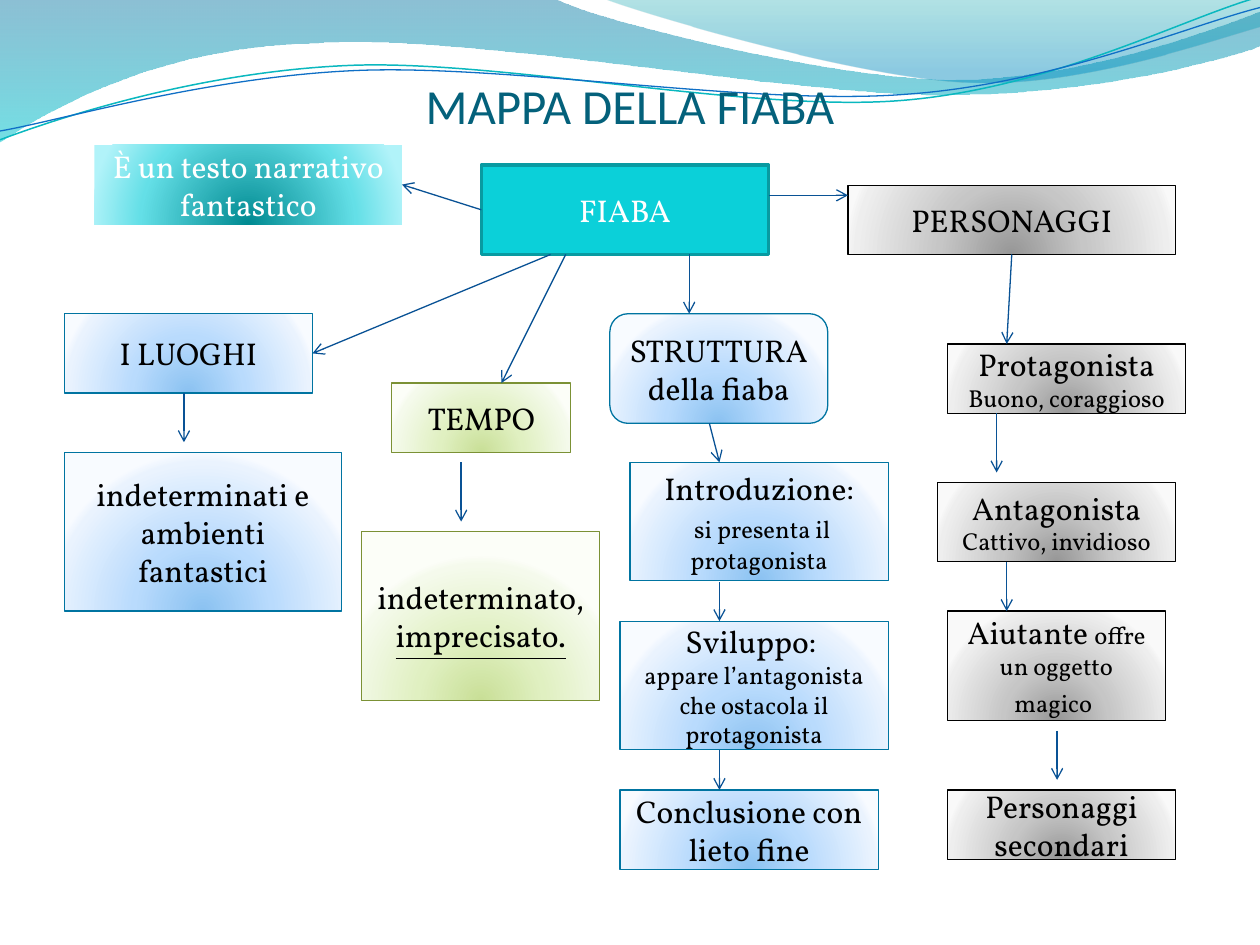
"""Build the concept map of the fairy tale as one slide."""
from dataclasses import dataclass
from typing import NamedTuple, Optional

import pptx
import pptx.dml.color
import pptx.enum.shapes
import pptx.enum.text
import pptx.oxml
import pptx.oxml.ns
import pptx.util

Inches = pptx.util.Inches
SHAPE = pptx.enum.shapes.MSO_SHAPE
ALIGN = pptx.enum.text.PP_ALIGN
ANCHOR = pptx.enum.text.MSO_ANCHOR
FONT = "Vollkorn"
LEFT, BOTTOM, RIGHT = 1, 2, 3
COLORS = {
    "title": "04617B", "fiaba": "0BD0D9", "fiaba_line": "089AA1",
    "arrow": "095295", "white": "FFFFFF", "black": "000000",
    "wave_teal": "0AB8BF", "wave_blue": "0F6FC6",
}


class Stop(NamedTuple):
    pos: int
    color: str
    alpha: int = 100


class Run(NamedTuple):
    text: str
    size: int = 18
    underline: bool = False


class Theme(NamedTuple):
    stops: tuple
    line: Optional[str] = None
    text: str = COLORS["black"]


class Wave(NamedTuple):
    start: tuple
    segments: tuple
    stops: tuple = ()
    line: str = ""
    width: float = 0


@dataclass
class Box:
    name: str
    at: tuple
    theme: Optional[Theme]
    paragraphs: tuple
    preset: int = SHAPE.RECTANGLE


@dataclass
class Arrow:
    start: tuple
    end: tuple
    begin_at: Optional[tuple] = None
    end_at: Optional[tuple] = None


def ramp(*colors: str) -> tuple:
    return tuple(Stop(pos, c) for pos, c in zip((0, 43, 93, 100), colors))


TEAL = Theme((Stop(0, "008A91"), Stop(68, "64DFE7"), Stop(100, "B1F3F9")),
             text=COLORS["white"])
BLUE = Theme(ramp("8BC2F1", "B9DBFD", "EAF3FE", "F8FBFF"), "0074A1")
GREEN = Theme(ramp("C9DF97", "E0F0C1", "F5FAEC", "FCFEF8"), "7B9135")
GREY = Theme(ramp("979797", "C6C6C6", "EEEEEE", "F9F9F9"), "000000")

WAVES = [
    Wave((0, 0), (
        ((4.4, -0.01),),
        ((4.76, 0.17), (6.64, 0.63), (7.58, 0.63)),
        ((8.53, 0.63), (9.58, 0.26), (10, 0.09)),
        ((10.01, 0.36),),
        ((9.83, 0.44), (8.7, 0.76), (7.46, 0.75)),
        ((6.22, 0.75), (3.82, 0.28), (2.57, 0.34)),
        ((1.29, 0.36), (0.46, 0.83), (-0.01, 1.13)),
    ), (Stop(0, "0074A1", 45), Stop(100, "00C6CF", 55))),
    Wave((4.79, -0.01), (
        ((5.09, 0.11), (6.82, 0.62), (7.69, 0.65)),
        ((8.56, 0.69), (9.61, 0.32), (10, 0.21)),
        ((10, 0),),
    ), (Stop(0, "00A1A9", 30), Stop(80, "008BBF", 45))),
    Wave((0, 1.11), (
        ((0.48, 0.93), (1.58, 0.57), (2.77, 0.52)),
        ((3.95, 0.47), (5.93, 0.89), (7.13, 0.8)),
        ((8.33, 0.71), (9.38, 0.15), (9.98, -0.02)),
    ), line=COLORS["wave_teal"], width=0.85),
    Wave((0, 1.04), (
        ((0.47, 0.96), (1.64, 0.61), (2.83, 0.56)),
        ((4.03, 0.51), (5.97, 0.84), (7.17, 0.75)),
        ((8.36, 0.67), (9.41, 0.21), (10, 0.06)),
    ), line=COLORS["wave_blue"], width=0.75),
]

BOXES = [
    Box("fiaba", (3.82, 1.31, 2.28, 0.71), None, ((Run("FIABA"),),)),
    Box("testo", (0.75, 1.15, 2.44, 0.63), TEAL, ((Run("È un testo narrativo fantastico"),),)),
    Box("luoghi", (0.51, 2.49, 1.97, 0.63), BLUE, ((Run("I LUOGHI"),),)),
    Box("ambienti", (0.51, 3.59, 2.2, 1.26), BLUE, ((Run("indeterminati e ambienti fantastici"),),)),
    Box("tempo", (3.11, 3.04, 1.42, 0.55), GREEN, ((Run("TEMPO"),),)),
    Box("imprecisato", (2.87, 4.22, 1.89, 1.34), GREEN,
        ((Run("indeterminato, "), Run("imprecisato.", underline=True)),)),
    Box("personaggi", (6.73, 1.47, 2.6, 0.55), GREY, ((Run("PERSONAGGI"),),)),
    Box("protagonista", (7.52, 2.73, 1.89, 0.55), GREY,
        ((Run("Protagonista"),), (Run("Buono, coraggioso", 14),))),
    Box("antagonista", (7.44, 3.83, 1.89, 0.63), GREY,
        ((Run("Antagonista"),), (Run("Cattivo, invidioso", 14),))),
    Box("aiutante", (7.52, 4.85, 1.73, 0.87), GREY,
        ((Run("Aiutante "), Run("offre un oggetto magico", 14), Run(" ")),)),
    Box("secondari", (7.52, 6.27, 1.81, 0.55), GREY, ((Run("Personaggi secondari"),),)),
    Box("struttura", (4.84, 2.49, 1.73, 0.87), BLUE,
        ((Run("STRUTTURA"),), (Run("della fiaba"),)), SHAPE.ROUNDED_RECTANGLE),
    Box("introduzione", (5, 3.67, 2.05, 0.94), BLUE,
        ((Run("Introduzione:"),), (Run(" "), Run("si presenta il protagonista", 14)))),
    Box("sviluppo", (4.92, 4.93, 2.13, 1.02), BLUE,
        ((Run("Sviluppo: "),), (Run("appare l’antagonista che ostacola il protagonista", 14),))),
    Box("conclusione", (4.92, 6.27, 2.05, 0.63), BLUE, ((Run("Conclusione con lieto fine"),),)),
]

ARROWS = [
    Arrow((6.1, 1.55), (6.73, 1.55)),
    Arrow((3.82, 1.66), (3.19, 1.47), ("fiaba", LEFT), ("testo", RIGHT)),
    Arrow((4.37, 2.02), (2.48, 2.81), end_at=("luoghi", RIGHT)),
    Arrow((4.49, 2.02), (3.98, 3.04)),
    Arrow((5.47, 2.02), (5.47, 2.49)),
    Arrow((1.46, 3.12), (1.46, 3.51)),
    Arrow((3.66, 3.67), (3.66, 4.14)),
    Arrow((5.63, 3.36), (5.71, 3.67)),
    Arrow((5.71, 4.62), (5.71, 4.93)),
    Arrow((5.71, 5.95), (5.71, 6.27)),
    Arrow((8.03, 2.02), (7.99, 2.73), begin_at=("personaggi", BOTTOM)),
    Arrow((7.91, 3.28), (7.91, 3.75)),
    Arrow((7.99, 4.46), (7.99, 4.85)),
    Arrow((8.39, 5.8), (8.39, 6.19)),
]


def rgb(color: str) -> pptx.dml.color.RGBColor:
    return pptx.dml.color.RGBColor.from_string(color)


def element(xml: str):
    head, rest = xml.split(" ", 1)
    return pptx.oxml.parse_xml(f'{head} {pptx.oxml.ns.nsdecls("a")} {rest}')


def set_line(sp, color: Optional[str], width: float = 0.75) -> None:
    if color is None:
        sp.line.fill.background()
        return
    sp.line.color.rgb = rgb(color)
    sp.line.width = pptx.util.Pt(width)


def set_gradient(sp, stops: tuple, direction: str) -> None:
    marks = "".join(
        f'<a:gs pos="{g.pos * 1000}"><a:srgbClr val="{g.color}">'
        f'<a:alpha val="{g.alpha * 1000}"/></a:srgbClr></a:gs>' for g in stops)
    sp.fill.background()
    empty = sp.element.xpath("p:spPr/a:noFill")[0]
    empty.getparent().replace(empty, element(
        f'<a:gradFill rotWithShape="1"><a:gsLst>{marks}</a:gsLst>{direction}</a:gradFill>'))


def bend(sp, segments: tuple) -> None:
    lines = iter(sp.element.xpath(".//a:lnTo"))
    for seg in segments:
        first, *others = [next(lines) for _ in seg]
        if others:
            curve = element("<a:cubicBezTo />")
            first.addprevious(curve)
            for ln in (first, *others):
                curve.append(ln[0])
                ln.getparent().remove(ln)


def draw_wave(s, wave: Wave) -> None:
    points = [wave.start] + [pt for seg in wave.segments for pt in seg]
    emu = [(Inches(x), Inches(y)) for x, y in points]
    builder = s.shapes.build_freeform(*emu[0], scale=1.0)
    builder.add_line_segments(emu[1:], close=bool(wave.stops))
    sp = builder.convert_to_shape()
    bend(sp, wave.segments)
    sp.shadow.inherit = False
    if wave.stops:
        set_gradient(sp, wave.stops, '<a:lin ang="5400000" scaled="0"/>')
        set_line(sp, None)
    else:
        sp.fill.background()
        set_line(sp, wave.line, wave.width)


def draw_title(s) -> None:
    sp = s.shapes.title
    sp.element.getparent().append(sp.element)
    sp.left, sp.top, sp.width, sp.height = map(Inches, (0.5, 0.52, 9, 0.55))
    tf = sp.text_frame
    tf.text = "MAPPA DELLA FIABA"
    tf.auto_size = pptx.enum.text.MSO_AUTO_SIZE.NONE
    tf.vertical_anchor = ANCHOR.BOTTOM
    tf.margin_left = tf.margin_right = tf.margin_bottom = 0
    p = tf.paragraphs[0]
    p.alignment = ALIGN.CENTER
    font = p.runs[0].font
    font.name, font.size = "Calibri", pptx.util.Pt(28)
    font.color.rgb = rgb(COLORS["title"])


def draw_box(s, box: Box):
    sp = s.shapes.add_shape(box.preset, *map(Inches, box.at))
    sp.shadow.inherit = False
    if box.theme:
        set_gradient(sp, box.theme.stops, '<a:path path="circle"><a:fillToRect l="50000" '
                     't="130000" r="50000" b="-30000"/></a:path>')
        set_line(sp, box.theme.line)
    else:
        sp.fill.solid()
        sp.fill.fore_color.rgb = rgb(COLORS["fiaba"])
        set_line(sp, COLORS["fiaba_line"], 2)
    tf = sp.text_frame
    tf.word_wrap = True
    tf.vertical_anchor = ANCHOR.MIDDLE
    for i, runs in enumerate(box.paragraphs):
        p = tf.add_paragraph() if i else tf.paragraphs[0]
        p.alignment = ALIGN.CENTER
        for run in runs:
            r = p.add_run()
            r.text = run.text
            r.font.name, r.font.size = FONT, pptx.util.Pt(run.size)
            r.font.underline = run.underline or None
            r.font.color.rgb = rgb(box.theme.text if box.theme else COLORS["white"])
    return sp


def draw_arrow(s, arrow: Arrow, boxes: dict) -> None:
    c = s.shapes.add_connector(pptx.enum.shapes.MSO_CONNECTOR.STRAIGHT,
                               *map(Inches, arrow.start + arrow.end))
    for join, target in ((c.begin_connect, arrow.begin_at), (c.end_connect, arrow.end_at)):
        if target:
            join(boxes[target[0]], target[1])
    set_line(c, COLORS["arrow"])
    c.element.xpath("p:spPr/a:ln")[0].append(element('<a:tailEnd type="arrow"/>'))
    c.element.xpath("p:spPr")[0].append(element("<a:effectLst />"))


def main() -> None:
    prs = pptx.Presentation()
    prs.slide_width, prs.slide_height = Inches(10), Inches(7.5)
    s = prs.slides.add_slide(prs.slide_layouts[5])
    for wave in WAVES:
        draw_wave(s, wave)
    draw_title(s)
    boxes = {box.name: draw_box(s, box) for box in BOXES}
    for arrow in ARROWS:
        draw_arrow(s, arrow, boxes)
    prs.save("out.pptx")


if __name__ == "__main__":
    main()
